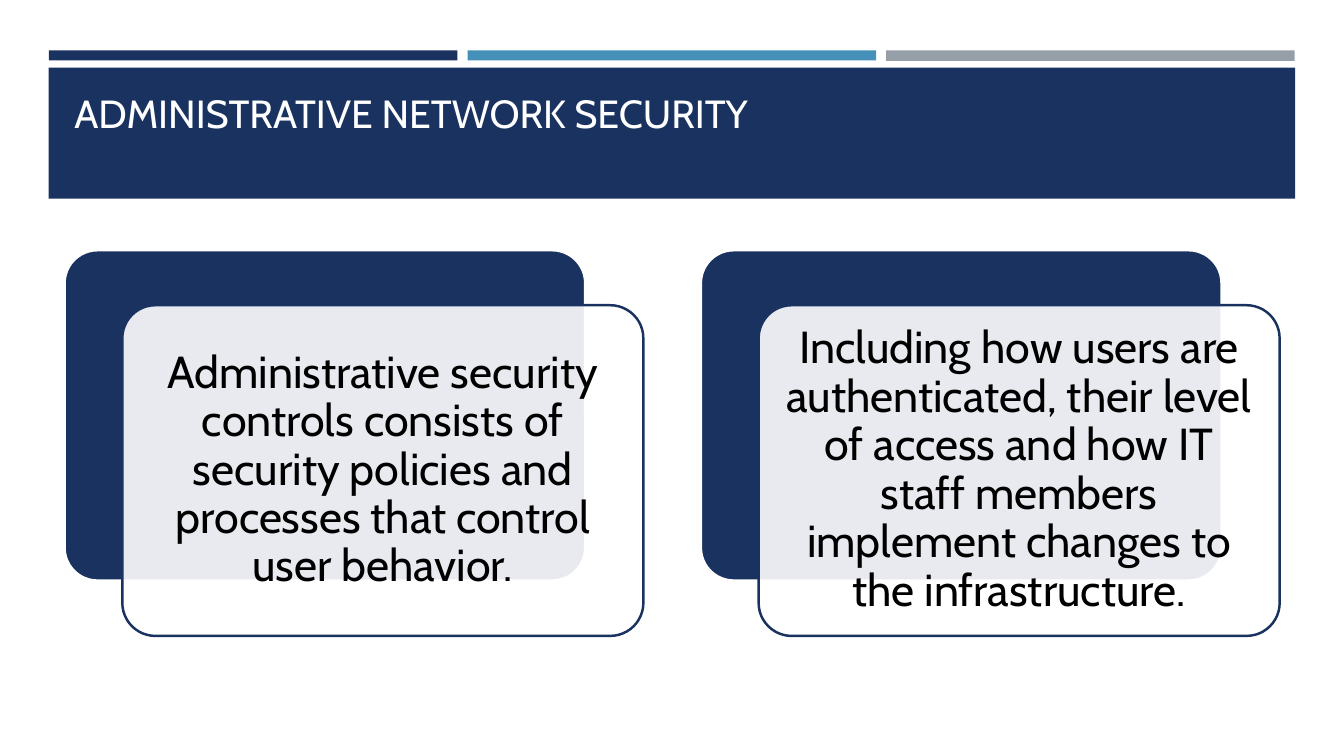
"""Build the slide on administrative network security."""
from typing import NamedTuple

from lxml import etree
from pptx import Presentation
from pptx.dml.color import RGBColor
from pptx.enum.shapes import MSO_SHAPE as Preset
from pptx.enum.text import MSO_ANCHOR as Anchor, PP_ALIGN as Align
from pptx.oxml.ns import qn
from pptx.shapes.autoshape import Shape
from pptx.slide import Slide
from pptx.util import Pt

NAVY, BLUE, GRAY, WHITE, BLACK = "1A3260", "4590B8", "969FA7", "FFFFFF", "000000"
FONT = "Cabin"
STRIPE_LEFT, STRIPE_PITCH = 35, 299
CARD_LEFT, CARD_PITCH = 46, 454.5
CARD_TOP, CARD_WIDTH, CARD_HEIGHT = 178.6, 372.2, 236.2
FRONT_SHIFT_X, FRONT_SHIFT_Y, TEXT_MARGIN = 41.4, 39.4, 6.9


class Box(NamedTuple):
    left: float
    top: float
    width: float
    height: float

    def moved(self, right: float, down: float) -> "Box":
        return self._replace(left=self.left + right, top=self.top + down)

    def shrunk(self, margin: float) -> "Box":
        return Box(self.left + margin, self.top + margin,
                   self.width - 2 * margin, self.height - 2 * margin)

    def lengths(self) -> list[Pt]:
        return [Pt(value) for value in self]


class Stripe(NamedTuple):
    color: str
    height: float


class Card(NamedTuple):
    statement: str


STRIPES = [Stripe(NAVY, 7.2), Stripe(BLUE, 7.2), Stripe(GRAY, 7.6)]
CARDS = [
    Card("Administrative security controls consists of security policies "
         "and processes that control user behavior."),
    Card("Including how users are authenticated, their level of access and how "
         "IT staff members implement changes to the infrastructure."),
]


def rgb(color: str) -> RGBColor:
    return RGBColor.from_string(color)


def add_panel(slide: Slide, box: Box, fill: str, preset: Preset = Preset.RECTANGLE,
              outline: str | None = None, weight: float = 0,
              opacity: int = 100) -> Shape:
    panel = slide.shapes.add_shape(preset, *box.lengths())
    panel.shadow.inherit = False
    panel.fill.solid()
    panel.fill.fore_color.rgb = rgb(fill)
    if opacity < 100:
        tint = panel.fill._xPr.find(f"{qn('a:solidFill')}/{qn('a:srgbClr')}")
        etree.SubElement(tint, qn("a:alpha"), val=str(opacity * 1000))
    if outline:
        panel.line.color.rgb = rgb(outline)
        panel.line.width = Pt(weight)
    else:
        panel.line.fill.background()
    if preset == Preset.ROUNDED_RECTANGLE:
        panel.adjustments[0] = 0.1
    return panel


def add_text(slide: Slide, text: str, box: Box, *, size: float, color: str,
             align: Align = Align.LEFT, anchor: Anchor = Anchor.TOP,
             inset_x: float = 7.2, inset_y: float = 3.6,
             spacing: float = 1.0) -> None:
    frame = slide.shapes.add_textbox(*box.lengths()).text_frame
    frame.word_wrap = True
    frame.vertical_anchor = anchor
    frame.margin_left = frame.margin_right = Pt(inset_x)
    frame.margin_top = frame.margin_bottom = Pt(inset_y)
    paragraph = frame.paragraphs[0]
    paragraph.alignment = align
    paragraph.line_spacing = spacing
    run = paragraph.add_run()
    run.text = text
    run.font.name = FONT
    run.font.size = Pt(size)
    run.font.color.rgb = rgb(color)


def add_header(slide: Slide) -> None:
    for index, stripe in enumerate(STRIPES):
        left = STRIPE_LEFT + index * STRIPE_PITCH
        add_panel(slide, Box(left, 36, 291.8, stripe.height), stripe.color)
    add_panel(slide, Box(34.8, 48.4, 890.4, 93.6), NAVY)
    add_text(slide, "ADMINISTRATIVE NETWORK SECURITY", Box(46, 55.4, 868.3, 79.9),
             size=28, color=WHITE, inset_y=8.6)


def add_card(slide: Slide, card: Card, left: float) -> None:
    back = Box(left, CARD_TOP, CARD_WIDTH, CARD_HEIGHT)
    front = back.moved(FRONT_SHIFT_X, FRONT_SHIFT_Y)
    add_panel(slide, back, NAVY, Preset.ROUNDED_RECTANGLE, WHITE, 2)
    add_panel(slide, front, WHITE, Preset.ROUNDED_RECTANGLE, NAVY, 1.75, opacity=90)
    add_text(slide, card.statement, front.shrunk(TEXT_MARGIN), size=32, color=BLACK,
             align=Align.CENTER, anchor=Anchor.MIDDLE, inset_x=9.6, inset_y=9.6,
             spacing=0.9)


def main() -> None:
    deck = Presentation()
    deck.slide_width, deck.slide_height = Pt(960), Pt(540)
    slide = deck.slides.add_slide(deck.slide_layouts[6])
    add_header(slide)
    for index, card in enumerate(CARDS):
        add_card(slide, card, CARD_LEFT + index * CARD_PITCH)
    deck.save("out.pptx")


if __name__ == "__main__":
    main()
